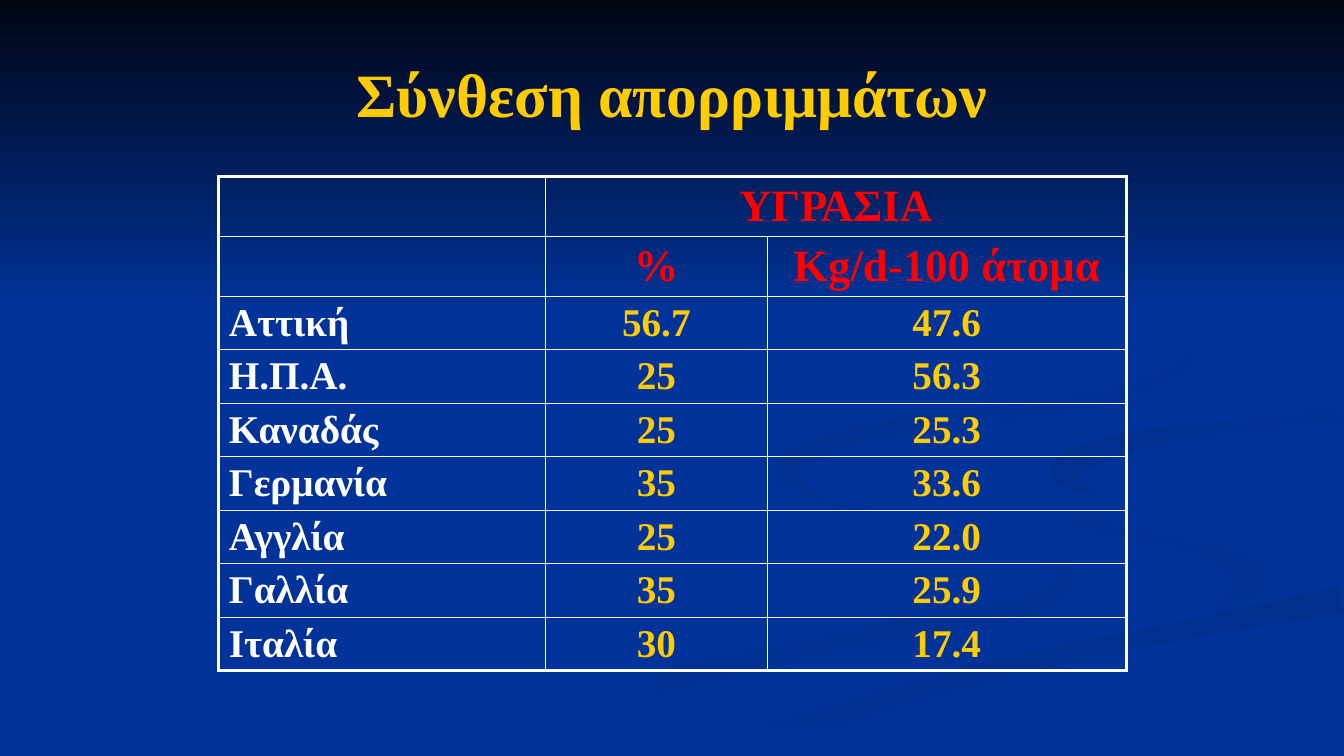
from math import hypot

from lxml.etree import SubElement
from pptx import Presentation
from pptx.dml.color import RGBColor
from pptx.enum.shapes import MSO_SHAPE
from pptx.enum.text import MSO_ANCHOR, PP_ALIGN
from pptx.oxml.ns import qn
from pptx.util import Inches, Pt

NIGHT = RGBColor(0x00, 0x05, 0x14)
BLUE = RGBColor(0x00, 0x33, 0x99)
DUSK = RGBColor(0x00, 0x31, 0x93)
SHADE = RGBColor(0x00, 0x2F, 0x8C)
GOLD = RGBColor(0xFF, 0xCC, 0x00)
RED = RGBColor(0xFF, 0x00, 0x00)
WHITE = RGBColor(0xFF, 0xFF, 0xFF)
FONT = "Times New Roman"
SLIDE_W, SLIDE_H = 13.33, 7.5

TITLE = "Σύνθεση απορριμμάτων"
ROWS = [
    ("", "ΥΓΡΑΣΙΑ", ""),
    ("", "%", "Kg/d-100 άτομα"),
    ("Αττική", "56.7", "47.6"),
    ("Η.Π.Α.", "25", "56.3"),
    ("Καναδάς", "25", "25.3"),
    ("Γερμανία", "35", "33.6"),
    ("Αγγλία", "25", "22.0"),
    ("Γαλλία", "35", "25.9"),
    ("Ιταλία", "30", "17.4"),
]
TABLE_LEFT, TABLE_TOP = 2.17, 1.75
COL_WIDTHS = (3.24, 2.2, 3.56)
HEADER_ROWS, HEADER_HEIGHT, ROW_HEIGHT = 2, 0.59, 0.53
OUTER_LINE, INNER_LINE = Pt(2.25), Pt(1)

SKY_HEIGHT = 3.08
DOWN, DIAGONAL, ACROSS = 270, 315, 0
STEPS_PER_KNOT = 6
# Each knot is (x, y, thickness) on the middle line of a swirl.
SWIRLS = {
    "lower": (BLUE, DUSK, ACROSS, [
        (7.64, 4.62, 0.03), (7.75, 4.81, 0.06), (8.5, 5.06, 0.03),
        (9.5, 5.29, 0.03), (10.35, 5.53, 0.06), (10.57, 5.73, 0.18),
        (10.35, 5.95, 0.2), (9.5, 6.15, 0.2), (8, 6.44, 0.22),
        (6.4, 6.81, 0.26), (4.41, 7.49, 0.3)]),
    "right": (BLUE, DUSK, DIAGONAL, [
        (9.65, 4.64, 0), (9.8, 4.86, 0.05), (10.3, 5.09, 0.11),
        (11.1, 5.27, 0.15), (11.9, 5.45, 0.17), (12.4, 5.7, 0.33),
        (12.29, 5.91, 0.18), (11.91, 6.05, 0)]),
    "road": (SHADE, BLUE, DOWN, [
        (7.16, 7.49, 0.35), (8.4, 7.06, 0.25), (10.2, 6.57, 0.2),
        (11.6, 6.28, 0.18), (13.31, 5.95, 0.27)]),
    "hook": (SHADE, BLUE, DIAGONAL, [
        (13.31, 4.11, 0.18), (12.44, 4.22, 0.14), (11.5, 4.33, 0.17),
        (11, 4.44, 0.2), (10.57, 4.64, 0.28), (10.68, 4.8, 0.15),
        (11.01, 4.96, 0)]),
    "upper": (SHADE, BLUE, DIAGONAL, [
        (10.17, 2.33, 0), (11, 2.64, 0.03), (11.56, 2.95, 0.06),
        (11.84, 3.24, 0.06), (11.88, 3.42, 0.07), (11.65, 3.69, 0.14),
        (11, 3.93, 0.17), (9.6, 4.16, 0.18), (8.5, 4.31, 0.17),
        (7.8, 4.62, 0.22), (7.95, 4.83, 0.1), (8.29, 5, 0)]),
}


def smooth(knots):
    padded = [knots[0], *knots, knots[-1]]
    curve = []
    for before, a, b, after in zip(padded, padded[1:], padded[2:], padded[3:]):
        for step in range(STEPS_PER_KNOT):
            t = step / STEPS_PER_KNOT
            curve.append(tuple(
                q + t * ((r - p) + t * ((2 * p - 5 * q + 4 * r - u)
                                        + t * (3 * q - p - 3 * r + u))) / 2
                for p, q, r, u in zip(before, a, b, after)))
    return curve + [knots[-1]]


def ribbon_outline(knots):
    curve = smooth(knots)
    left_edge, right_edge = [], []
    for i, (x, y, thickness) in enumerate(curve):
        x0, y0, _ = curve[max(i - 1, 0)]
        x1, y1, _ = curve[min(i + 1, len(curve) - 1)]
        dx, dy = x1 - x0, y1 - y0
        half = max(thickness, 0) / 2 / hypot(dx, dy)
        for edge, side in ((left_edge, half), (right_edge, -half)):
            edge.append((Inches(min(x - dy * side, SLIDE_W)),
                         Inches(min(y + dx * side, SLIDE_H))))
    return left_edge + right_edge[::-1]


def paint(sp, start, end, angle):
    sp.shadow.inherit = False
    sp.line.fill.background()
    sp.fill.gradient()
    sp.fill.gradient_angle = angle
    for stop, color, position in zip(sp.fill.gradient_stops, (start, end), (0, 1)):
        stop.color.rgb = color
        stop.position = position


def add_backdrop(s):
    s.background.fill.solid()
    s.background.fill.fore_color.rgb = BLUE
    for start, end, angle, knots in SWIRLS.values():
        outline = ribbon_outline(knots)
        builder = s.shapes.build_freeform(*outline[0])
        builder.add_line_segments(outline[1:], close=True)
        paint(builder.convert_to_shape(), start, end, angle)
    sky = s.shapes.add_shape(MSO_SHAPE.RECTANGLE, 0, 0, Inches(SLIDE_W), Inches(SKY_HEIGHT))
    paint(sky, NIGHT, BLUE, DOWN)


def write(tf, text, size, color, align):
    tf.text = text
    p = tf.paragraphs[0]
    p.alignment = align
    for r in p.runs:
        r.font.name = FONT
        r.font.size = Pt(size)
        r.font.bold = True
        r.font.color.rgb = color


def add_title(s):
    title = s.shapes.title
    title.element.getparent().append(title.element)
    title.left, title.top = Inches(0.67), Inches(0.3)
    title.width, title.height = Inches(12), Inches(1.25)
    title.text_frame.vertical_anchor = MSO_ANCHOR.MIDDLE
    write(title.text_frame, TITLE, 44, GOLD, PP_ALIGN.CENTER)


def add_borders(cell, outer_sides):
    tc_pr = cell._tc.get_or_add_tcPr()
    for side, outer in zip("LRTB", outer_sides):
        width = OUTER_LINE if outer else INNER_LINE
        ln = SubElement(tc_pr, qn(f"a:ln{side}"), w=str(width))
        fill = SubElement(ln, qn("a:solidFill"))
        SubElement(fill, qn("a:srgbClr"), val=str(WHITE))


def add_moisture_table(s):
    last_row, last_col = len(ROWS) - 1, len(COL_WIDTHS) - 1
    heights = [HEADER_HEIGHT if i < HEADER_ROWS else ROW_HEIGHT for i in range(len(ROWS))]
    table = s.shapes.add_table(len(ROWS), len(COL_WIDTHS),
                               Inches(TABLE_LEFT), Inches(TABLE_TOP),
                               Inches(sum(COL_WIDTHS)), Inches(sum(heights))).table
    table.first_row = table.horz_banding = False
    table.cell(0, 1).merge(table.cell(0, last_col))
    for column, width in zip(table.columns, COL_WIDTHS):
        column.width = Inches(width)
    for i, values in enumerate(ROWS):
        table.rows[i].height = Inches(heights[i])
        header = i < HEADER_ROWS
        for j, value in enumerate(values):
            cell = table.cell(i, j)
            color = RED if header else GOLD if j else WHITE
            align = PP_ALIGN.CENTER if j else PP_ALIGN.LEFT
            write(cell.text_frame, value, 32 if header else 28, color, align)
            right_col = j + cell.span_width - 1 if cell.is_merge_origin else j
            add_borders(cell, (j == 0, right_col == last_col, i == 0, i == last_row))
            cell.fill.background()


def main():
    prs = Presentation()
    prs.slide_width, prs.slide_height = Inches(SLIDE_W), Inches(SLIDE_H)
    s = prs.slides.add_slide(prs.slide_layouts[5])
    add_backdrop(s)
    add_title(s)
    add_moisture_table(s)
    prs.save("out.pptx")


if __name__ == "__main__":
    main()
